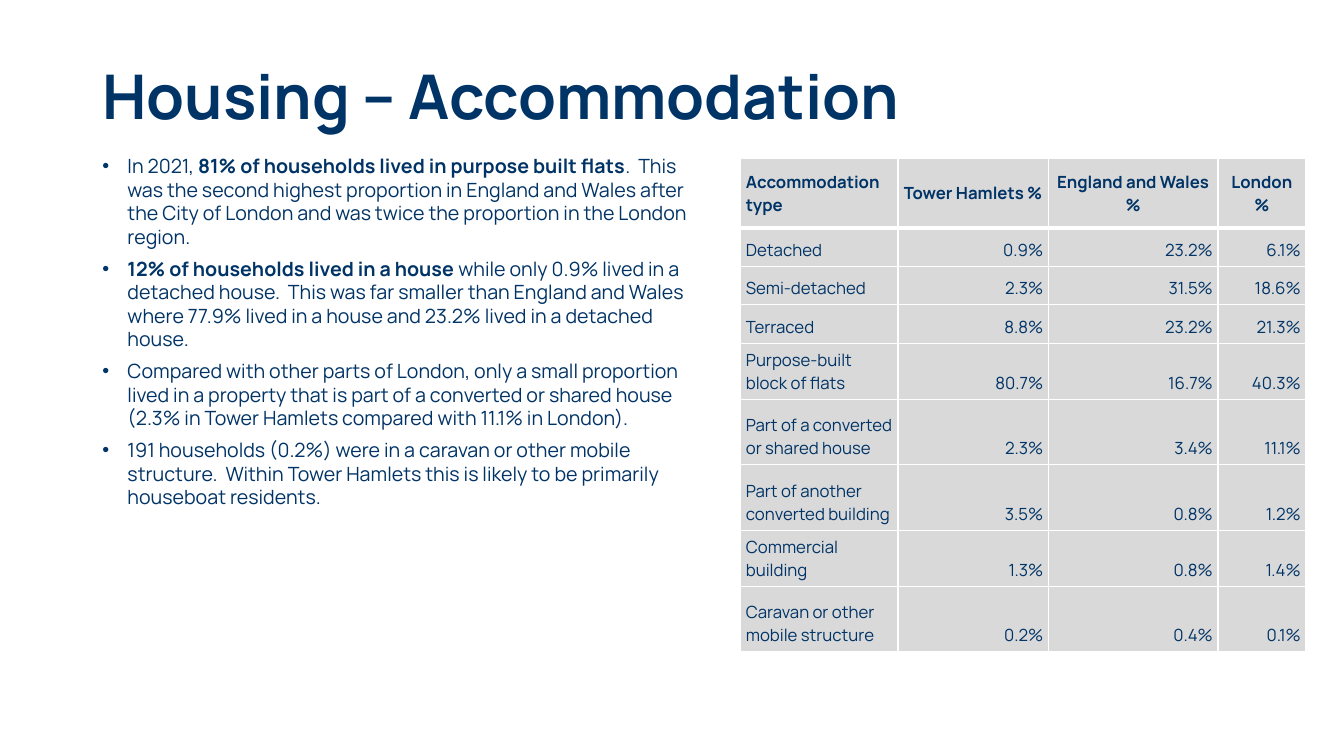
from pptx import Presentation
from pptx.dml.color import RGBColor
from pptx.enum.text import MSO_ANCHOR, PP_ALIGN
from pptx.oxml import parse_xml
from pptx.oxml.ns import nsdecls
from pptx.util import Pt

TOP, MID, LOW = MSO_ANCHOR.TOP, MSO_ANCHOR.MIDDLE, MSO_ANCHOR.BOTTOM
LEFT, MIDST, RIGHT = PP_ALIGN.LEFT, PP_ALIGN.CENTER, PP_ALIGN.RIGHT
FACE, NAVY, GREY, WHITE = "Manrope", "003366", "D9D9D9", "FFFFFF"

POINTS = [
    [("In 2021,", False),
     (" 81% of households lived in purpose built flats", True),
     (".  This was the second highest proportion in England and Wales after "
      "the City of London and was twice the proportion in the London region.", False)],
    [("12% of households lived in a house", True),
     (" while only 0.9% lived in a detached house.  This was far smaller than "
      "England and Wales where 77.9% lived in a house and 23.2% lived in a "
      "detached house.", False)],
    [("Compared with other parts of London, only a small proportion lived in a "
      "property that is part of a converted or shared house (2.3% in Tower "
      "Hamlets compared with 11.1% in London).", False)],
    [("191 households (0.2%) were in a caravan or other mobile structure.  "
      "Within Tower Hamlets this is likely to be primarily houseboat residents.", False)],
]
HEAD = ["Accommodation type", "Tower Hamlets %", "England and Wales %", "London %"]
HOMES = [
    ("Detached", 0.9, 23.2, 6.1),
    ("Semi-detached", 2.3, 31.5, 18.6),
    ("Terraced", 8.8, 23.2, 21.3),
    ("Purpose-built block of flats", 80.7, 16.7, 40.3),
    ("Part of a converted or shared house", 2.3, 3.4, 11.1),
    ("Part of another converted building", 3.5, 0.8, 1.2),
    ("Commercial building", 1.3, 0.8, 1.4),
    ("Caravan or other mobile structure", 0.2, 0.4, 0.1),
]
WIDTHS = [112.3, 107.3, 121.2, 62.8]
HEIGHTS = [49.5, 27.5, 27.5, 27.5, 40, 46.8, 46.8, 40, 46.8]


def tint(code):
    return RGBColor.from_string(code)


def put(item, **form):
    for name, value in form.items():
        setattr(item, name, value)


def write(para, runs, size):
    for text, bold in runs:
        run = para.add_run()
        run.text = text
        put(run.font, name=FACE, size=Pt(size), bold=bold)
        run.font.color.rgb = tint(NAVY)


def add_box(slide, left, top, width, height, anchor):
    box = slide.shapes.add_textbox(Pt(left), Pt(top), Pt(width), Pt(height))
    put(box.text_frame, word_wrap=True, vertical_anchor=anchor)
    return box.text_frame


def add_title(slide, text):
    frame = add_box(slide, 66, 18.7, 770, 104.4, MID)
    para = frame.paragraphs[0]
    para.line_spacing = 0.9
    write(para, [(text, True)], 44)


def add_list(slide, points):
    frame = add_box(slide, 66, 106.5, 440, 378, TOP)
    for i, runs in enumerate(points):
        para = frame.add_paragraph() if i else frame.paragraphs[0]
        put(para, line_spacing=1.0, space_before=Pt(6 if i else 0))
        props = para._p.get_or_add_pPr()
        props.set("marL", str(Pt(18)))
        props.set("indent", str(-Pt(18)))
        props.append(parse_xml(f'<a:buFont {nsdecls("a")} typeface="Arial"/>'))
        props.append(parse_xml(f'<a:buChar {nsdecls("a")} char="•"/>'))
        write(para, runs, 14)


def edge(cell, row):
    sides = {"L": 1, "R": 1, "T": 3 if row == 1 else 1, "B": 3 if row == 0 else 1}
    props = cell._tc.get_or_add_tcPr()
    for side, width in sides.items():
        props.append(parse_xml(
            f'<a:ln{side} {nsdecls("a")} w="{Pt(width)}"><a:solidFill>'
            f'<a:srgbClr val="{WHITE}"/></a:solidFill></a:ln{side}>'))


def fill_cell(cell, text, row, col):
    edge(cell, row)
    cell.fill.solid()
    cell.fill.fore_color.rgb = tint(GREY)
    pad = Pt(3.6)
    put(cell, margin_left=pad, margin_right=pad, margin_top=pad,
        margin_bottom=pad, vertical_anchor=LOW if row else MID)
    para = cell.text_frame.paragraphs[0]
    para.alignment = LEFT if col == 0 else RIGHT if row else MIDST
    write(para, [(text, row == 0)], 12)


def add_grid(slide):
    rows = [HEAD] + [[home] + [f"{rate}%" for rate in rates] for home, *rates in HOMES]
    table = slide.shapes.add_table(
        len(rows), len(HEAD), Pt(529.2), Pt(113.2),
        Pt(sum(WIDTHS)), Pt(sum(HEIGHTS))).table
    table.horz_banding = False
    for col, width in enumerate(WIDTHS):
        table.columns[col].width = Pt(width)
    for row, texts in enumerate(rows):
        table.rows[row].height = Pt(HEIGHTS[row])
        for col, text in enumerate(texts):
            fill_cell(table.cell(row, col), text, row, col)


def main():
    deck = Presentation()
    put(deck, slide_width=Pt(960), slide_height=Pt(540))
    slide = deck.slides.add_slide(deck.slide_layouts[6])
    add_title(slide, "Housing – Accommodation")
    add_list(slide, POINTS)
    add_grid(slide)
    deck.save("out.pptx")


if __name__ == "__main__":
    main()
